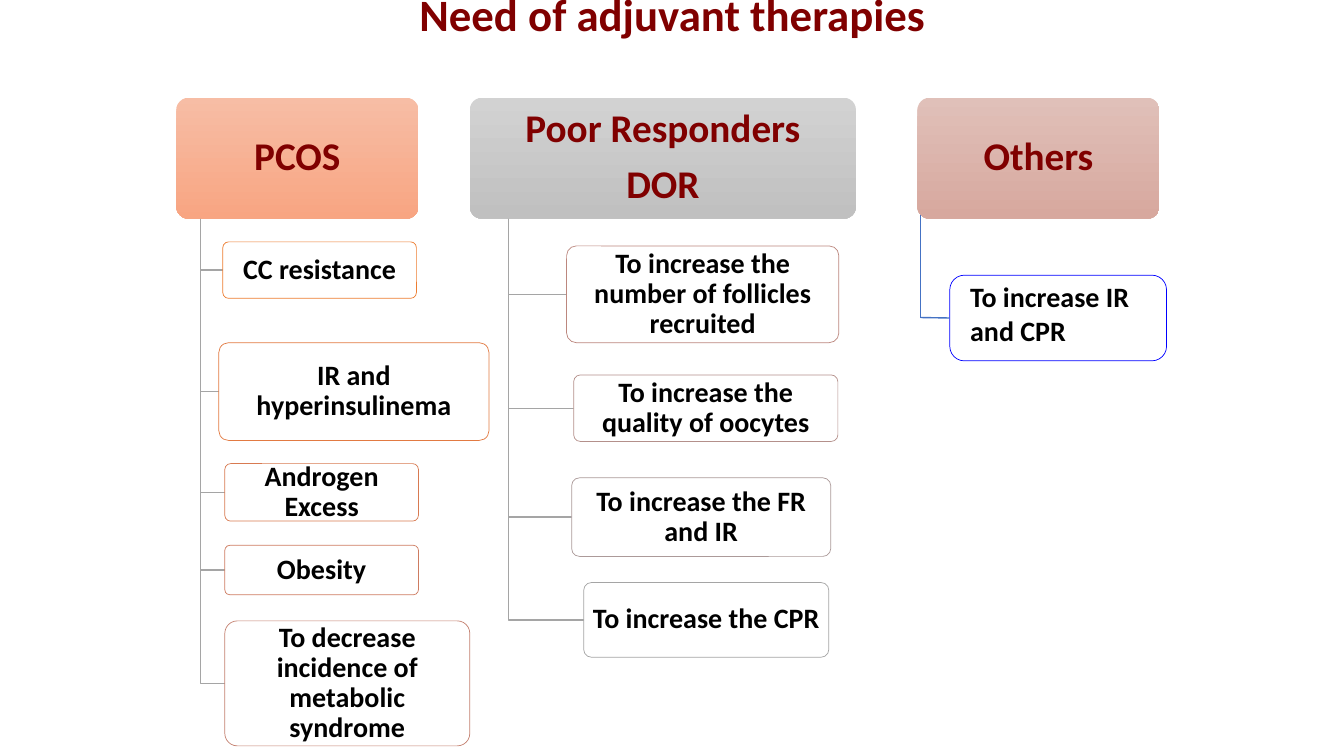
from lxml import etree
from pptx import Presentation
from pptx.dml.color import RGBColor
from pptx.enum.shapes import MSO_CONNECTOR, MSO_SHAPE
from pptx.enum.text import MSO_ANCHOR, PP_ALIGN
from pptx.oxml.ns import qn
from pptx.util import Inches, Pt

ROUNDED = MSO_SHAPE.ROUNDED_RECTANGLE
STRAIGHT = MSO_CONNECTOR.STRAIGHT
TOP, MIDDLE = MSO_ANCHOR.TOP, MSO_ANCHOR.MIDDLE
LEFT, CENTER = PP_ALIGN.LEFT, PP_ALIGN.CENTER
LEFT_SIDE = 1
TITLE_ONLY = 5

FONT = "Calibri"
COLORS = {
    "heading": "800000", "text": "000000", "white": "FFFFFF",
    "branch": "A5A5A5", "blue line": "4472C4", "blue border": "0000FF",
}
HEADER_TOP, HEADER_HEIGHT = 0.97, 1.2
HEADER_BOTTOM = HEADER_TOP + HEADER_HEIGHT

# Header: left, width, gradient, lines. Item: left, top, width, height, border, text.
COLUMNS = [
    ((1.75, 2.4, ("F7BDA5", "F8A582"), ["PCOS"]), [
        (2.21, 2.4, 1.92, 0.56, "ED7D31", "CC resistance"),
        (2.17, 3.4, 2.68, 0.97, "E27A42", "IR and hyperinsulinema"),
        (2.23, 4.6, 1.92, 0.57, "D87A51", "Androgen Excess"),
        (2.23, 5.41, 1.92, 0.49, "CE7C61", "Obesity"),
        (2.23, 6.16, 2.43, 1.24, "C48170",
         "To decrease incidence of metabolic syndrome"),
    ]),
    ((4.66, 3.83, ("D2D2D2", "C0C0C0"), ["Poor Responders", "DOR"]), [
        (5.62, 2.44, 2.7, 0.96, "BC877E",
         "To increase the number of follicles recruited"),
        (5.69, 3.72, 2.62, 0.66, "B4908B", "To increase the quality of oocytes"),
        (5.67, 4.74, 2.57, 0.78, "AC9A99", "To increase the FR and IR"),
        (5.79, 5.78, 2.43, 0.74, "A5A5A5", "To increase the CPR"),
    ]),
    ((9.1, 2.4, ("E0C0B9", "D7A89E"), ["Others"]), []),
]


class TherapySlide:
    def __init__(self, presentation):
        self.slide = presentation.slides.add_slide(
            presentation.slide_layouts[TITLE_ONLY])
        self.shapes = self.slide.shapes

    def add_text(self, shape, lines, size, color, insets, anchor=MIDDLE,
                 align=CENTER, spacing=0.9):
        """Fill a shape with bold text; insets are left, top, right, bottom."""
        frame = shape.text_frame
        frame.word_wrap = True
        frame.vertical_anchor = anchor
        (frame.margin_left, frame.margin_top,
         frame.margin_right, frame.margin_bottom) = map(Inches, insets)
        for index, line in enumerate(lines):
            paragraph = frame.add_paragraph() if index else frame.paragraphs[0]
            paragraph.alignment = align
            paragraph.line_spacing = spacing
            paragraph.space_after = Pt(0.35 * size)
            run = paragraph.add_run()
            run.text = line
            run.font.name = FONT
            run.font.size = Pt(size)
            run.font.bold = True
            run.font.color.rgb = RGBColor.from_string(COLORS[color])

    def title(self, text):
        title = self.shapes.title
        title.left, title.top = Inches(2.17), Inches(-0.12)
        title.width, title.height = Inches(9), Inches(1.25)
        self.add_text(title, [text], 32, "heading", (0.1, 0.05, 0.1, 0.05), TOP)

    def rounded_box(self, left, top, width, height, border=None, corner=0.1):
        box = self.shapes.add_shape(
            ROUNDED, Inches(left), Inches(top), Inches(width), Inches(height))
        box.shadow.inherit = False
        box.adjustments[0] = corner
        if border:
            box.line.color.rgb = RGBColor.from_string(border)
            box.line.width = Pt(0.5)
        else:
            box.line.fill.background()
        return box

    def header(self, left, width, gradient, lines):
        box = self.rounded_box(left, HEADER_TOP, width, HEADER_HEIGHT)
        box.fill.gradient()
        box.fill.gradient_angle = 270
        for stop, color in zip(box.fill.gradient_stops, gradient):
            stop.color.rgb = RGBColor.from_string(color)
        self.add_text(box, lines, 28, "heading", (0.06, 0.04, 0.06, 0.04))

    def item(self, left, top, width, height, border, text):
        box = self.rounded_box(left, top, width, height, border)
        box.fill.solid()
        box.fill.fore_color.rgb = RGBColor.from_string(COLORS["white"])
        self.add_text(box, [text], 20, "text", (0.04, 0.03, 0.04, 0.03))

    def branch(self, trunk, item_left, item_middle):
        """Draw an elbow from under a header to the left side of an item."""
        builder = self.shapes.build_freeform(
            Inches(trunk), Inches(HEADER_BOTTOM))
        builder.add_line_segments(
            [(Inches(trunk), Inches(item_middle)),
             (Inches(item_left), Inches(item_middle))], close=False)
        elbow = builder.convert_to_shape()
        elbow.shadow.inherit = False
        elbow.fill.background()
        elbow.line.color.rgb = RGBColor.from_string(COLORS["branch"])
        elbow.line.width = Pt(1)

    def column(self, header, items):
        self.header(*header)
        left, width = header[:2]
        trunk = left + width / 10
        for item in items:
            item_left, top, _, height = item[:4]
            self.branch(trunk, item_left, top + height / 2)
            self.item(*item)

    def line(self, start, end):
        connector = self.shapes.add_connector(
            STRAIGHT, *map(Inches, start + end))
        connector.line.color.rgb = RGBColor.from_string(COLORS["blue line"])
        connector.line.width = Pt(1)
        etree.SubElement(connector._element.spPr, qn("a:effectLst"))
        return connector

    def others_item(self, text):
        box = self.rounded_box(
            9.42, 2.73, 2.15, 0.85, COLORS["blue border"], corner=0.17)
        box.fill.background()
        self.add_text(box, [text], 20, "text", (0.16, 0, 0, 0), TOP, LEFT, 1.0)
        corner = (9.13, 3.15)
        self.line((9.13, 2.13), corner)
        self.line(corner, (9.42, 3.15)).end_connect(box, LEFT_SIDE)


def main():
    presentation = Presentation()
    presentation.slide_width = Inches(13.33)
    presentation.slide_height = Inches(7.5)
    slide = TherapySlide(presentation)
    slide.title("Need of adjuvant therapies")
    for header, items in COLUMNS:
        slide.column(header, items)
    slide.others_item("To increase IR and CPR")
    presentation.save("out.pptx")


if __name__ == "__main__":
    main()
